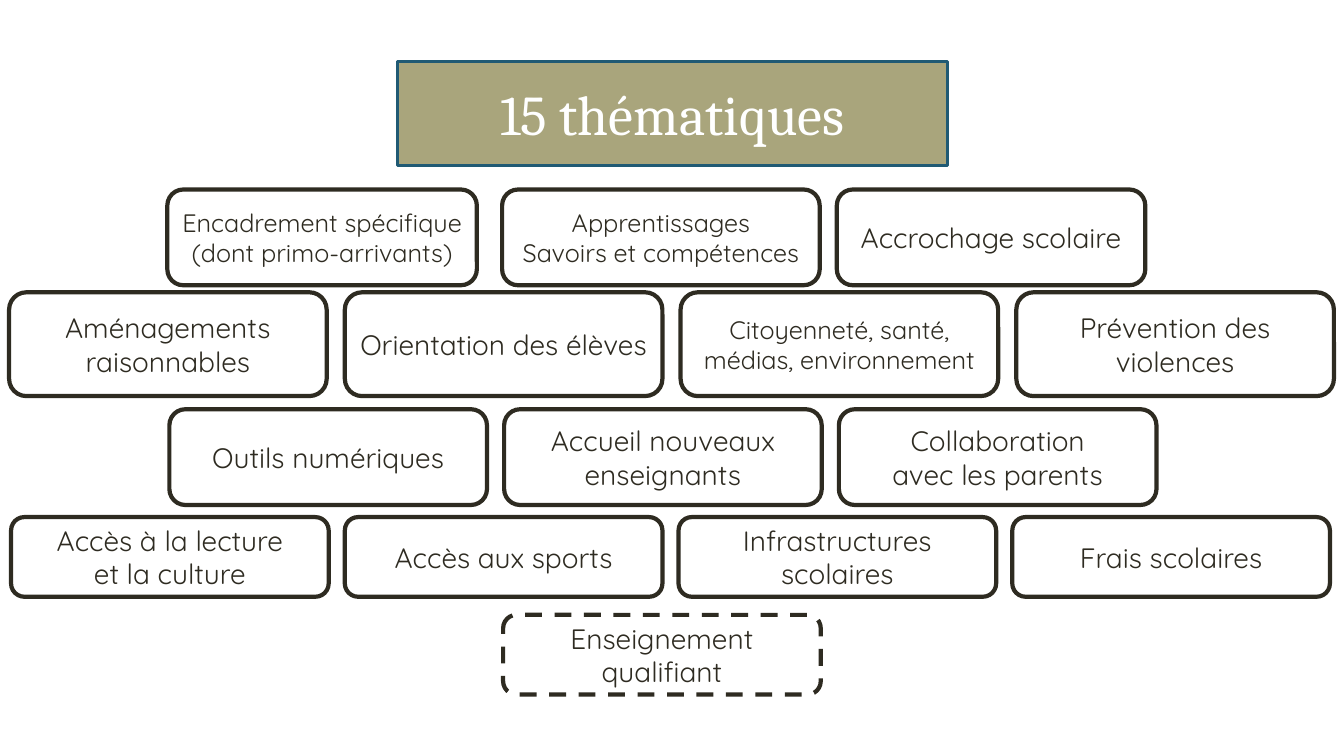
from dataclasses import dataclass

from lxml.etree import SubElement
from pptx import Presentation
from pptx.dml.color import RGBColor
from pptx.enum.dml import MSO_LINE_DASH_STYLE as Dash
from pptx.enum.shapes import MSO_AUTO_SHAPE_TYPE as Preset
from pptx.enum.text import MSO_ANCHOR, MSO_AUTO_SIZE, PP_ALIGN
from pptx.oxml.ns import qn
from pptx.shapes.autoshape import Shape
from pptx.slide import Slide
from pptx.util import Inches, Pt


@dataclass(frozen=True)
class Style:
    font: str
    text: RGBColor
    fill: RGBColor
    border: RGBColor
    border_width: float


@dataclass(frozen=True)
class Theme:
    banner: Style
    card: Style
    title_size: int = 40
    card_size: int = 20
    compact_size: int = 18


@dataclass(frozen=True)
class Topic:
    lines: tuple[str, ...]
    compact: bool = False
    width: float = 3.15
    dashed: bool = False


@dataclass(frozen=True)
class Row:
    left: float
    top: float
    height: float
    step: float
    topics: tuple[Topic, ...]


WHITE = RGBColor.from_string("FFFFFF")
INK = RGBColor.from_string("2E2B21")
THEME = Theme(
    banner=Style("Cambria", WHITE, RGBColor.from_string("A9A57C"),
                 RGBColor.from_string("205A74"), 2),
    card=Style("Quicksand", INK, WHITE, INK, 3),
)

ROWS = (
    Row(1.66, 1.88, 0.95, 3.32, (
        Topic(("Encadrement spécifique", "(dont primo-arrivants)"), compact=True, width=3.07),
        Topic(("Apprentissages", "Savoirs et compétences"), compact=True),
        Topic(("Accrochage scolaire",), width=3.06),
    )),
    Row(0.09, 2.9, 1.03, 3.33, (
        Topic(("Aménagements raisonnables",)),
        Topic(("Orientation des élèves",)),
        Topic(("Citoyenneté, santé, médias, environnement",), compact=True),
        Topic(("Prévention des violences",)),
    )),
    Row(1.68, 4.06, 0.95, 3.32, (
        Topic(("Outils numériques",)),
        Topic(("Accueil nouveaux enseignants",)),
        Topic(("Collaboration", "avec les parents")),
    )),
    Row(0.11, 5.13, 0.79, 3.31, (
        Topic(("Accès à la lecture", "et la culture")),
        Topic(("Accès aux sports",)),
        Topic(("Infrastructures scolaires",)),
        Topic(("Frais scolaires",)),
    )),
    Row(4.99, 6.1, 0.79, 0, (
        Topic(("Enseignement qualifiant",), dashed=True),
    )),
)


def decorate(box: Shape, style: Style) -> None:
    box.fill.solid()
    box.fill.fore_color.rgb = style.fill
    box.line.color.rgb = style.border
    box.line.width = Pt(style.border_width)
    box.shadow.inherit = False


def write(box: Shape, lines: tuple[str, ...], style: Style, size: int) -> None:
    frame = box.text_frame
    frame.word_wrap = True
    frame.auto_size = MSO_AUTO_SIZE.NONE
    frame.vertical_anchor = MSO_ANCHOR.MIDDLE
    for index, line in enumerate(lines):
        paragraph = frame.add_paragraph() if index else frame.paragraphs[0]
        paragraph.alignment = PP_ALIGN.CENTER
        run = paragraph.add_run()
        run.text = line
        run.font.name = style.font
        run.font.size = Pt(size)
        run.font.color.rgb = style.text


def add_banner(slide: Slide, heading: str) -> None:
    banner = slide.shapes.title
    banner.left, banner.top = Inches(3.94), Inches(0.61)
    banner.width, banner.height = Inches(5.46), Inches(1.03)
    outline = SubElement(banner.element.spPr, qn("a:prstGeom"), prst="roundRect")
    SubElement(outline, qn("a:avLst"))
    decorate(banner, THEME.banner)
    write(banner, (heading,), THEME.banner, THEME.title_size)


def add_row(slide: Slide, row: Row) -> None:
    for column, topic in enumerate(row.topics):
        card = slide.shapes.add_shape(
            Preset.ROUNDED_RECTANGLE,
            Inches(row.left + column * row.step), Inches(row.top),
            Inches(topic.width), Inches(row.height),
        )
        decorate(card, THEME.card)
        if topic.dashed:
            card.line.dash_style = Dash.DASH
        size = THEME.compact_size if topic.compact else THEME.card_size
        write(card, topic.lines, THEME.card, size)


def main() -> None:
    deck = Presentation()
    deck.slide_width, deck.slide_height = Inches(13.33), Inches(7.5)
    slide = deck.slides.add_slide(deck.slide_layouts.get_by_name("Title Only"))
    add_banner(slide, "15 thématiques")
    for row in ROWS:
        add_row(slide, row)
    deck.save("out.pptx")


if __name__ == "__main__":
    main()
